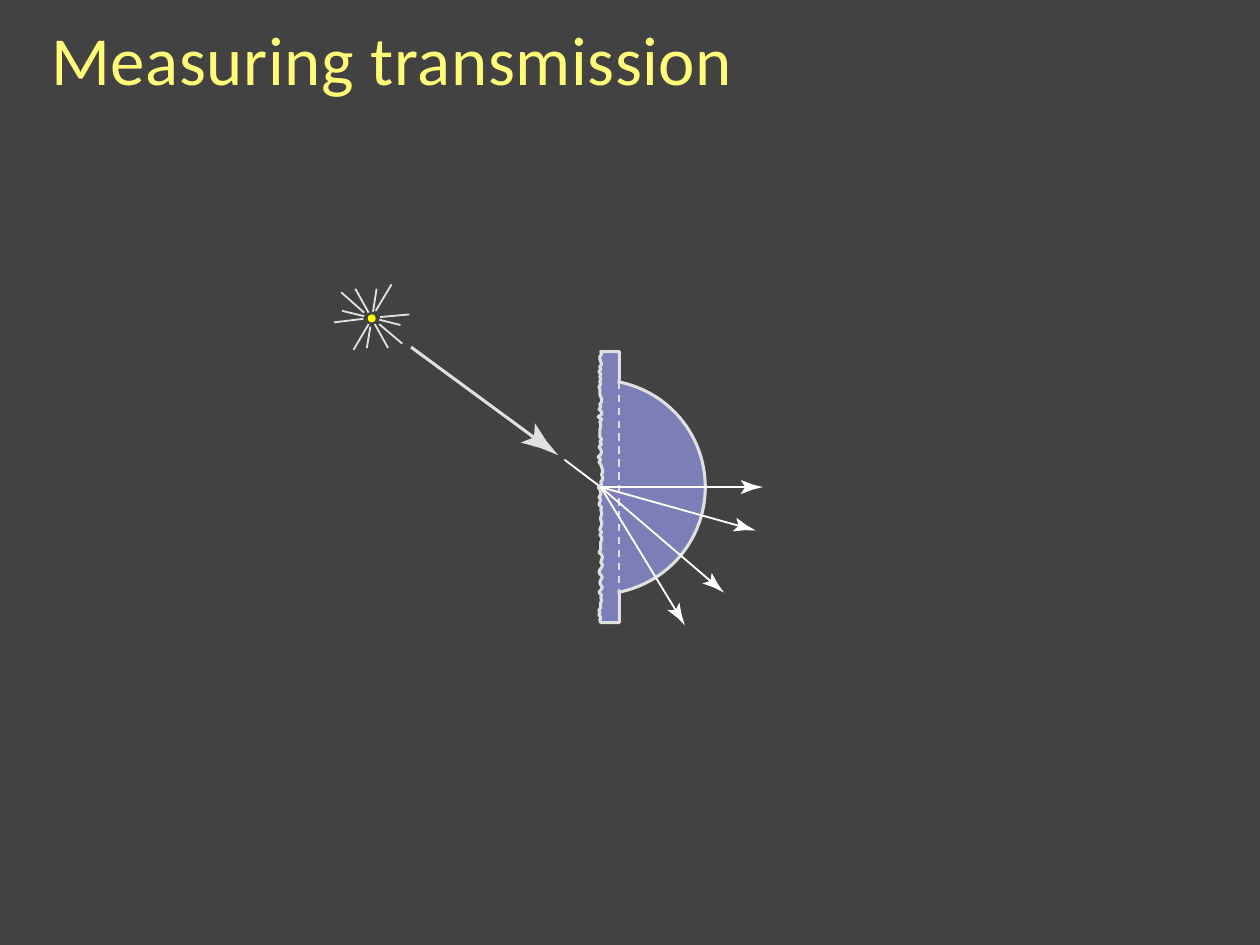
from math import asin, atan2, cos, hypot, sin

from lxml import etree
from pptx import Presentation
from pptx.dml.color import RGBColor
from pptx.enum.dml import MSO_LINE
from pptx.enum.shapes import MSO_CONNECTOR, MSO_SHAPE
from pptx.enum.text import MSO_ANCHOR, PP_ALIGN
from pptx.oxml.ns import qn
from pptx.util import Pt

PX = 9144
STRAIGHT = MSO_CONNECTOR.STRAIGHT
OVAL = MSO_SHAPE.OVAL
DASH = MSO_LINE.DASH
TOP = MSO_ANCHOR.TOP
LEFT = PP_ALIGN.LEFT

BACKGROUND = RGBColor(0x42, 0x42, 0x42)
TITLE_YELLOW = RGBColor(0xFF, 0xFC, 0x78)
LAMP_YELLOW = RGBColor(0xFF, 0xFC, 0x00)
GLASS = RGBColor(0x7C, 0x7F, 0xB7)
GREY = RGBColor(0xE0, 0xE0, 0xE0)
WHITE = RGBColor(0xFF, 0xFF, 0xFF)

SLIDE_SIZE = (1422, 1067)
TITLE = "Measuring transmission"
TITLE_BOX = (58, 18, 774, 96)
LAMP_BOX = (415, 355, 9, 9)
GLEAMS = [
    (462, 355, 429, 358), (410, 360, 377, 364), (423, 366, 438, 393),
    (401, 326, 416, 353), (411, 357, 386, 351), (452, 367, 428, 361),
    (425, 326, 421, 352), (414, 393, 418, 369), (442, 321, 424, 351),
    (399, 395, 416, 366), (454, 388, 428, 366), (411, 353, 385, 330),
]
ENTRY = (678, 550)
ENTERING_RAY = (637, 519, *ENTRY)
LAMP_BEAM = ((464, 392), (630, 514))
EXIT_TIPS = [(853, 599), (817, 669), (773, 706), (861, 550)]
ARROWHEAD = [(-25, -8), (-20, 0), (-25, 8), (-12, 3), (0, 0), (-12, -3)]
SHAFT_GAP = 18

PLATE_TOP, PLATE_BOTTOM, PLATE_RIGHT = 397, 703, 699
ROUGH_LEFT = 675
ROUGHNESS = [
    3, 4, 2, 2, 3, 4, 2, 3, 1, 3, 2, 3, 2, 3, 1, 2, 2, 2, 3, 4, 4, 2, 3, 1, 4, 4, 0,
    4, 2, 3, 3, 2, 2, 2, 2, 4, 2, 4, 1, 3, 4, 3, 0, 3, 1, 3, 4, 5, 5, 4, 5, 5, 3, 4,
    0, 2, 3, 3, 1, 3, 2, 1, 4, 3, 4, 4, 3, 3, 4, 4, 3, 2, 4, 2, 4, 4, 3, 3, 3, 3, 1,
    4, 5, 4, 3, 5, 4, 2, 1, 3, 5, 3, 2, 3, 5, 3, 1, 4, 3, 4, 3, 3, 3, 1, 2, 1, 3, 2, 3,
]
DOME_TOP, DOME_BOTTOM = 431, 669
DOME_CENTER, DOME_RADIUS, DOME_STEPS = (675, 550), 121, 60


def emu(*lengths):
    return [round(length * PX) for length in lengths]


def add_title(slide, text, *, box, font, size, color, spacing):
    title = slide.shapes.title
    title.left, title.top, title.width, title.height = emu(*box)
    frame = title.text_frame
    frame.margin_left = frame.margin_right = frame.margin_bottom = 0
    frame.margin_top = PX
    frame.vertical_anchor = TOP
    frame.word_wrap = False
    paragraph = frame.paragraphs[0]
    paragraph.alignment = LEFT
    paragraph.space_before = Pt(1)
    run = paragraph.add_run()
    run.text = text
    run.font.name = font
    run.font.size = Pt(size)
    run.font.color.rgb = color
    run.font._element.set("spc", str(spacing))


def add_line(slide, ends, color, width=1.5, dash=None):
    line = slide.shapes.add_connector(STRAIGHT, *emu(*ends))
    line.line.color.rgb = color
    line.line.width = Pt(width)
    if dash:
        line.line.dash_style = dash
    etree.SubElement(line._element.spPr, qn("a:effectLst"))


def paint(shape, fill=None, outline=None):
    shape.shadow.inherit = False
    if fill:
        shape.fill.solid()
        shape.fill.fore_color.rgb = fill
    else:
        shape.fill.background()
    if outline:
        shape.line.color.rgb = outline
        shape.line.width = Pt(2.5)
    else:
        shape.line.fill.background()


def add_outline(slide, points, *, closed=True, **colors):
    start, *rest = [emu(*point) for point in points]
    builder = slide.shapes.build_freeform(*start, scale=1.0)
    builder.add_line_segments(rest, close=closed)
    paint(builder.convert_to_shape(), **colors)


def add_arrow(slide, start, tip, color, width=1.5, head_scale=1):
    dx, dy = tip[0] - start[0], tip[1] - start[1]
    angle = atan2(dy, dx)
    shaft = 1 - SHAFT_GAP * head_scale / hypot(dx, dy)
    add_line(slide, (*start, start[0] + dx * shaft, start[1] + dy * shaft), color, width)
    head = [
        (tip[0] + head_scale * (x * cos(angle) - y * sin(angle)),
         tip[1] + head_scale * (x * sin(angle) + y * cos(angle)))
        for x, y in ARROWHEAD
    ]
    add_outline(slide, head, fill=color)


def plate_points():
    step = (PLATE_BOTTOM - PLATE_TOP) / (len(ROUGHNESS) - 1)
    rough_edge = [
        (ROUGH_LEFT + depth, PLATE_TOP + row * step) for row, depth in enumerate(ROUGHNESS)
    ]
    return [
        (PLATE_RIGHT, DOME_TOP), (PLATE_RIGHT, PLATE_TOP), *rough_edge,
        (PLATE_RIGHT, PLATE_BOTTOM), (PLATE_RIGHT, DOME_BOTTOM),
    ]


def dome_points():
    center_x, center_y = DOME_CENTER
    limit = asin((DOME_BOTTOM - center_y) / DOME_RADIUS)
    angles = [limit * (2 * step / DOME_STEPS - 1) for step in range(DOME_STEPS + 1)]
    return [
        (center_x + DOME_RADIUS * cos(angle), center_y + DOME_RADIUS * sin(angle))
        for angle in angles
    ]


def main():
    deck = Presentation()
    deck.slide_width, deck.slide_height = emu(*SLIDE_SIZE)
    slide = deck.slides.add_slide(deck.slide_layouts[5])
    slide.background.fill.solid()
    slide.background.fill.fore_color.rgb = BACKGROUND
    add_title(slide, TITLE, box=TITLE_BOX, font="Calibri", size=56,
              color=TITLE_YELLOW, spacing=50)

    add_line(slide, ENTERING_RAY, WHITE)
    paint(slide.shapes.add_shape(OVAL, *emu(*LAMP_BOX)), fill=LAMP_YELLOW)
    for gleam in GLEAMS:
        add_line(slide, gleam, GREY)
    add_arrow(slide, *LAMP_BEAM, GREY, width=2.5, head_scale=1.7)

    for points in (plate_points(), dome_points()):
        add_outline(slide, points, fill=GLASS)
        add_outline(slide, points, closed=False, outline=GREY)
    seam = (PLATE_RIGHT, DOME_TOP, PLATE_RIGHT, DOME_BOTTOM)
    add_line(slide, seam, GLASS, width=0.25)
    add_line(slide, seam, GREY, dash=DASH)

    for tip in EXIT_TIPS:
        add_arrow(slide, ENTRY, tip, WHITE)
    deck.save("out.pptx")


if __name__ == "__main__":
    main()
